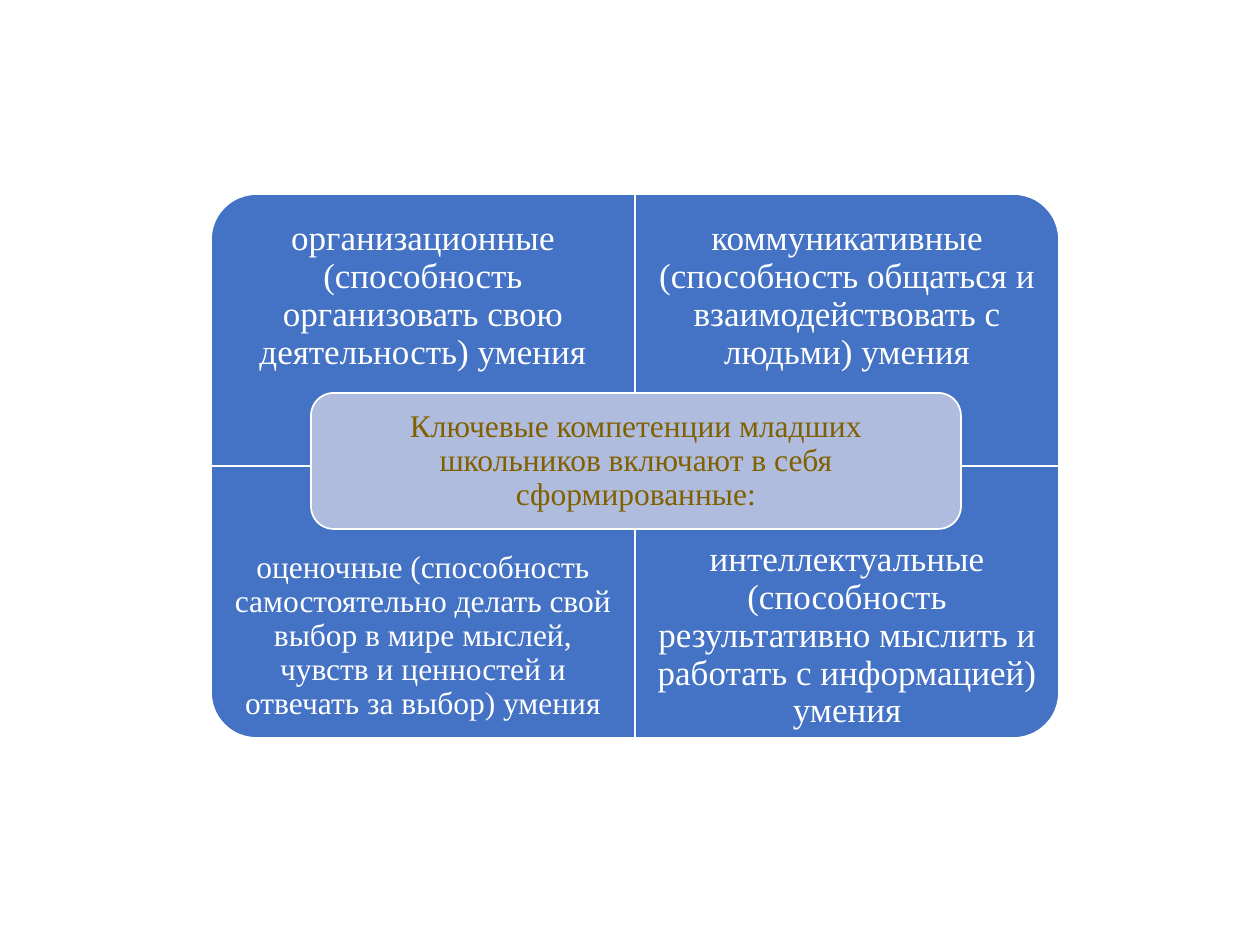
from dataclasses import dataclass

import pptx
import pptx.dml.color
import pptx.enum.shapes
import pptx.enum.text
import pptx.util

EMU_PER_PX = 914400 / 126
BLUE = pptx.dml.color.RGBColor(0x44, 0x72, 0xC4)
PALE_BLUE = pptx.dml.color.RGBColor(0xB0, 0xBC, 0xDE)
WHITE = pptx.dml.color.RGBColor(0xFF, 0xFF, 0xFF)
OLIVE = pptx.dml.color.RGBColor(0x80, 0x60, 0x00)
KINDS = pptx.enum.shapes.MSO_SHAPE

# Matrix of four quadrants, in px
LEFT, TOP = 211, 194
QUAD_W, QUAD_H = 424, 272
LABEL_H = QUAD_H * 3 // 4


@dataclass(frozen=True)
class Box:
    left: int
    top: int
    width: int
    height: int

    def emu(self) -> list[pptx.util.Emu]:
        return [px(v) for v in (self.left, self.top, self.width, self.height)]

    def inset(self, margin: int) -> "Box":
        return Box(self.left + margin, self.top + margin,
                   self.width - 2 * margin, self.height - 2 * margin)

    def quarter_turned(self) -> "Box":
        """Same centre, with width and height exchanged."""
        shift = (self.width - self.height) // 2
        return Box(self.left + shift, self.top - shift, self.height, self.width)


@dataclass(frozen=True)
class Skill:
    column: int
    row: int
    rotation: int
    text: str
    size: int = 20
    margin: int = 20


SKILLS = [
    Skill(0, 0, 270, "организационные (способность организовать свою деятельность) умения"),
    Skill(1, 0, 0, "коммуникативные (способность общаться и взаимодействовать с людьми) умения"),
    Skill(0, 1, 180, "оценочные (способность самостоятельно делать свой выбор в мире мыслей, "
          "чувств и ценностей и отвечать за выбор) умения", size=18, margin=18),
    Skill(1, 1, 90, "интеллектуальные (способность результативно мыслить и работать "
          "с информацией) умения"),
]
CENTRE = Box(311, 393, 650, 136)
CENTRE_TEXT = "Ключевые компетенции младших школьников включают в себя сформированные:"


def px(value: int) -> pptx.util.Emu:
    return pptx.util.Emu(round(value * EMU_PER_PX))


def add_panel(slide, kind, box: Box, fill, rotation: int = 0) -> None:
    panel = slide.shapes.add_shape(kind, *box.emu())
    panel.rotation = rotation
    panel.shadow.inherit = False
    panel.fill.solid()
    panel.fill.fore_color.rgb = fill
    panel.line.color.rgb = WHITE
    panel.line.width = pptx.util.Pt(1)


def add_text(slide, box: Box, text: str, *, size: int, margin: int, color=WHITE) -> None:
    frame = slide.shapes.add_textbox(*box.emu()).text_frame
    frame.word_wrap = True
    frame.vertical_anchor = pptx.enum.text.MSO_ANCHOR.MIDDLE
    frame.margin_left = frame.margin_right = px(margin)
    frame.margin_top = frame.margin_bottom = px(margin)
    paragraph = frame.paragraphs[0]
    paragraph.alignment = pptx.enum.text.PP_ALIGN.CENTER
    paragraph.line_spacing = 0.9
    run = paragraph.add_run()
    run.text = text
    run.font.name = "Times New Roman"
    run.font.size = pptx.util.Pt(size)
    run.font.color.rgb = color


def add_skill(slide, skill: Skill) -> None:
    quadrant = Box(LEFT + skill.column * QUAD_W, TOP + skill.row * QUAD_H, QUAD_W, QUAD_H)
    sideways = skill.rotation % 180 == 90
    add_panel(slide, KINDS.ROUND_1_RECTANGLE,
              quadrant.quarter_turned() if sideways else quadrant, BLUE, skill.rotation)
    # The label keeps to the outer three quarters, clear of the centre
    label = Box(quadrant.left, quadrant.top + skill.row * (QUAD_H - LABEL_H), QUAD_W, LABEL_H)
    add_text(slide, label, skill.text, size=skill.size, margin=skill.margin)


def main() -> None:
    deck = pptx.Presentation()
    deck.slide_width, deck.slide_height = px(1260), px(945)
    slide = deck.slides.add_slide(deck.slide_layouts[6])

    # Quadrants
    for skill in SKILLS:
        add_skill(slide, skill)

    # Centre
    add_panel(slide, KINDS.ROUNDED_RECTANGLE, CENTRE, PALE_BLUE)
    add_text(slide, CENTRE.inset(7), CENTRE_TEXT, size=18, margin=9, color=OLIVE)

    deck.save("out.pptx")


if __name__ == "__main__":
    main()
